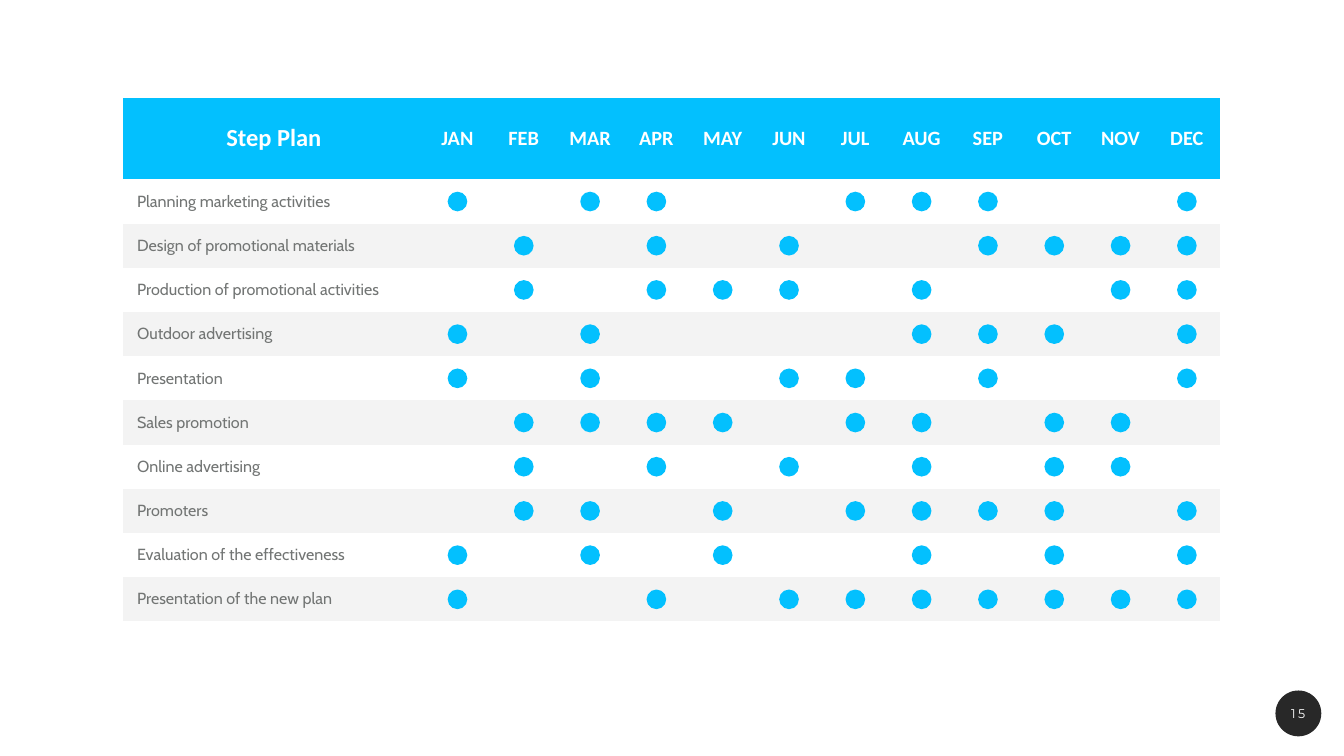
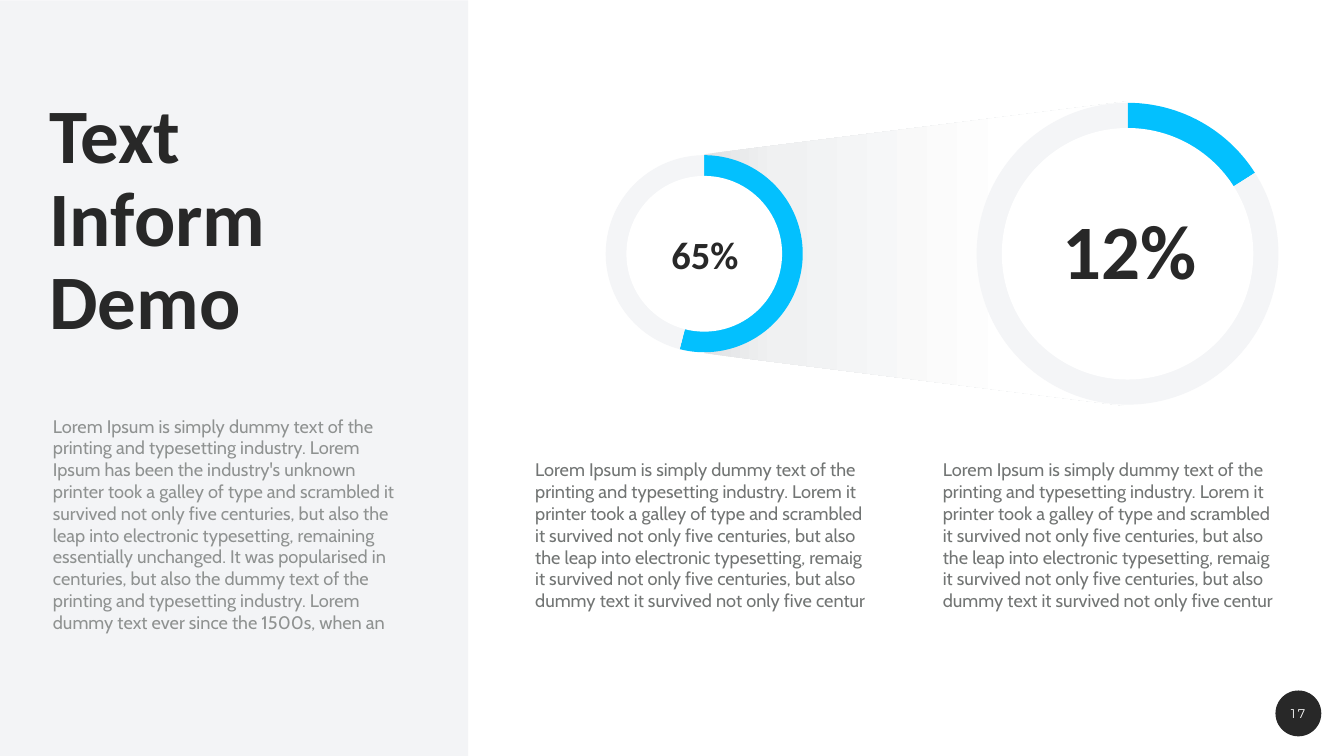
from copy import deepcopy
from dataclasses import dataclass

from lxml.etree import SubElement
from pptx import Presentation
from pptx.chart.data import CategoryChartData
from pptx.dml.color import RGBColor
from pptx.enum.chart import XL_CHART_TYPE as ChartType
from pptx.enum.shapes import MSO_SHAPE as Preset
from pptx.enum.text import MSO_ANCHOR as Anchor, MSO_AUTO_SIZE as AutoSize, PP_ALIGN as Align
from pptx.oxml.ns import qn
from pptx.util import Pt

PX = 9144
SLIDE_W, SLIDE_H = 2667, 1500
TITLE_ONLY, BLANK = 5, 6
PLAIN_TABLE = "{2D5ABB26-0587-4C30-8999-92F81FD0307C}"

CYAN = RGBColor(0x03, 0xC0, 0xFE)
DARK = RGBColor(0x28, 0x28, 0x28)
WHITE = RGBColor(0xFF, 0xFF, 0xFF)
STRIPE = RGBColor(0xF3, 0xF3, 0xF3)
PANEL = RGBColor(0xF3, 0xF4, 0xF6)
TRACK = RGBColor(0xF4, 0xF5, 0xF7)
GREY = RGBColor(0x72, 0x75, 0x74)
PALE = RGBColor(0x8F, 0x92, 0x91)
BEAM_STOPS = [
    (0, RGBColor(0xE1, 0xE2, 0xE4)),
    (0.17, RGBColor(0xF0, 0xF1, 0xF2)),
    (0.74, WHITE),
]


@dataclass
class Style:
    size: int
    font: str
    color: RGBColor
    bold: bool = False
    align: Align = Align.LEFT
    leading: float = 1.0
    tracking: int = 0


PAGE_NUMBER = Style(18, "Montserrat", WHITE, align=Align.CENTER, tracking=360)
PLAN_HEAD = Style(35, "Calibri", WHITE, True, Align.CENTER, 0.9)
MONTH_HEAD = Style(29, "Calibri", WHITE, True, Align.CENTER, 0.9)
STEP = Style(23, "Cabin", GREY)
HEADLINE = Style(110, "Calibri", DARK, True, leading=0.9)
INTRO = Style(26, "Cabin", PALE)
CAPTION = Style(26, "Cabin", GREY)

MONTHS = "JAN FEB MAR APR MAY JUN JUL AUG SEP OCT NOV DEC".split()
PLAN_TITLE = "Step Plan"
PLAN = [
    ("Planning marketing activities", "JAN MAR APR JUL AUG SEP DEC"),
    ("Design of promotional materials", "FEB APR JUN SEP OCT NOV DEC"),
    ("Production of promotional activities", "FEB APR MAY JUN AUG NOV DEC"),
    ("Outdoor advertising", "JAN MAR AUG SEP OCT DEC"),
    ("Presentation", "JAN MAR JUN JUL SEP DEC"),
    ("Sales promotion", "FEB MAR APR MAY JUL AUG OCT NOV"),
    ("Online advertising", "FEB APR JUN AUG OCT NOV"),
    ("Promoters", "FEB MAR MAY JUL AUG SEP OCT DEC"),
    ("Evaluation of the effectiveness", "JAN MAR MAY AUG OCT DEC"),
    ("Presentation of the new plan", "JAN APR JUN JUL AUG SEP OCT NOV DEC"),
]

INFORM_TITLE = "Text\nInform\nDemo"
INTRO_TEXT = (
    "Lorem Ipsum is simply dummy text of the printing and typesetting industry. "
    "Lorem Ipsum has been the industry's unknown printer took a galley of type and "
    "scrambled it survived not only five centuries, but also the leap into electronic "
    "typesetting, remaining essentially unchanged. It was popularised in centuries, "
    "but also the dummy text of the printing and typesetting industry. "
    "Lorem dummy text ever since the 1500s, when an"
)
CAPTION_TEXT = (
    "Lorem Ipsum is simply dummy text of the printing and typesetting industry. "
    "Lorem it printer took a galley of type and scrambled it survived not only five "
    "centuries, but also the leap into electronic typesetting, remaig it survived not "
    "only five centuries, but also dummy text it survived not only five centur"
)
RINGS = [
    {"label": "65%", "share": 54, "at": (1200, 306), "size": 395, "band": 43,
     "label_box": (1316, 459, 166, 103), "label_size": 55, "caption_x": 1058},
    {"label": "12%", "share": 16, "at": (1935, 201), "size": 605, "band": 53,
     "label_box": (2081, 408, 323, 196), "label_size": 110, "caption_x": 1867},
]

TABLE_X, TABLE_Y, TABLE_W, TABLE_H = 245, 195, 2176, 1038
STEP_W, HEAD_H, DOT = 597, 161, 39
MONTH_W = (TABLE_W - STEP_W) / len(MONTHS)
ROW_H = (TABLE_H - HEAD_H) / len(PLAN)


def emu(*lengths):
    return [round(length * PX) for length in lengths]


def write(frame, text, style):
    frame.text = text
    for paragraph in frame.paragraphs:
        paragraph.alignment = style.align
        paragraph.line_spacing = style.leading
        for run in paragraph.runs:
            run.font.size = Pt(style.size)
            run.font.name = style.font
            run.font.bold = style.bold
            run.font.color.rgb = style.color
            if style.tracking:
                run.font._element.set("spc", str(style.tracking))


def set_frame(frame, anchor=Anchor.TOP, wrap=True, fit=AutoSize.NONE):
    frame.margin_left = frame.margin_right = frame.margin_top = frame.margin_bottom = 4 * PX
    frame.vertical_anchor = anchor
    frame.word_wrap = wrap
    frame.auto_size = fit


def add_text(slide, box, text, style, **layout):
    frame = slide.shapes.add_textbox(*emu(*box)).text_frame
    set_frame(frame, **layout)
    write(frame, text, style)


def add_plain(slide, preset, box, color):
    shape = slide.shapes.add_shape(preset, *emu(*box))
    shape.shadow.inherit = False
    shape.fill.solid()
    shape.fill.fore_color.rgb = color
    shape.line.fill.background()


def add_page_number(slide, number):
    add_plain(slide, Preset.OVAL, (2531, 1370, 91, 91), DARK)
    add_text(slide, (2543, 1396, 66, 39), str(number), PAGE_NUMBER,
             fit=AutoSize.SHAPE_TO_FIT_TEXT)


def fill_cell(cell, color, text="", style=STEP, left=6):
    cell.fill.solid()
    cell.fill.fore_color.rgb = color
    cell.vertical_anchor = Anchor.MIDDLE
    cell.margin_right = cell.margin_top = cell.margin_bottom = 6 * PX
    cell.margin_left = left * PX
    if text:
        write(cell.text_frame, text, style)


def add_plan_table(slide):
    graphic = slide.shapes.add_table(
        len(PLAN) + 1, len(MONTHS) + 1, *emu(TABLE_X, TABLE_Y, TABLE_W, TABLE_H))
    table = graphic.table
    table._tbl.tblPr.find(qn("a:tableStyleId")).text = PLAIN_TABLE
    table.horz_banding = False
    for column, width in zip(table.columns, emu(STEP_W, *[MONTH_W] * len(MONTHS))):
        column.width = width
    for row, height in zip(table.rows, emu(HEAD_H, *[ROW_H] * len(PLAN))):
        row.height = height

    fill_cell(table.cell(0, 0), CYAN, PLAN_TITLE, PLAN_HEAD)
    for column, month in enumerate(MONTHS, 1):
        fill_cell(table.cell(0, column), CYAN, month, MONTH_HEAD)
    for row, (step, _) in enumerate(PLAN, 1):
        color = WHITE if row % 2 else STRIPE
        fill_cell(table.cell(row, 0), color, step, STEP, left=27)
        for column in range(1, len(MONTHS) + 1):
            fill_cell(table.cell(row, column), color)


def add_plan_dots(slide):
    for row, (_, active) in enumerate(PLAN):
        y = TABLE_Y + HEAD_H + (row + 0.5) * ROW_H - DOT / 2
        for month in active.split():
            x = TABLE_X + STEP_W + (MONTHS.index(month) + 0.5) * MONTH_W - DOT / 2
            add_plain(slide, Preset.OVAL, (x, y, DOT, DOT), CYAN)


def add_beam(slide):
    small, large = [
        (x + size / 2, y, y + size)
        for (x, y), size in ((ring["at"], ring["size"]) for ring in RINGS)
    ]
    builder = slide.shapes.build_freeform(small[0], small[1], scale=PX)
    builder.add_line_segments(
        [(large[0], large[1]), (large[0], large[2]), (small[0], small[2])], close=True)
    beam = builder.convert_to_shape()
    beam.shadow.inherit = False
    beam.line.fill.background()
    beam.fill.gradient()
    beam.fill.gradient_angle = 0
    first = beam.fill.gradient_stops[0]._gs
    first.addnext(deepcopy(first))
    for stop, (position, color) in zip(beam.fill.gradient_stops, BEAM_STOPS):
        stop.position = position
        stop.color.rgb = color


def fill_plot(chart):
    area = chart._chartSpace.chart.plotArea
    layout = area.find(qn("c:layout"))
    if layout is None:
        layout = area.makeelement(qn("c:layout"))
        area.insert(0, layout)
    manual = SubElement(layout, qn("c:manualLayout"))
    for tag, value in [("layoutTarget", "inner"), ("xMode", "edge"), ("yMode", "edge"),
                       ("x", 0.005), ("y", 0.005), ("w", 0.99), ("h", 0.99)]:
        SubElement(manual, qn(f"c:{tag}")).set("val", str(value))


def add_ring(slide, ring):
    (x, y), size, band = ring["at"], ring["size"], ring["band"]
    shares = CategoryChartData()
    shares.categories = ["1", "2"]
    shares.add_series("Series 1", (ring["share"], 100 - ring["share"]))
    chart = slide.shapes.add_chart(ChartType.PIE, *emu(x, y, size, size), shares).chart
    chart.has_legend = False
    chart.has_title = False
    chart.font.name = "Montserrat"
    chart.font.size = Pt(10)
    chart.font.color.rgb = GREY
    pie = chart.plots[0]
    pie.vary_by_categories = True
    for index, color in enumerate((CYAN, TRACK)):
        slice_format = pie.series[0].points[index].format
        slice_format.fill.solid()
        slice_format.fill.fore_color.rgb = color
        slice_format.line.fill.background()
    fill_plot(chart)

    hole = size - 2 * band
    add_plain(slide, Preset.OVAL, (x + band, y + band, hole, hole), WHITE)
    label = Style(ring["label_size"], "Calibri", DARK, True, Align.CENTER, 0.9)
    add_text(slide, ring["label_box"], ring["label"], label, anchor=Anchor.MIDDLE,
             wrap=False, fit=AutoSize.SHAPE_TO_FIT_TEXT)
    add_text(slide, (ring["caption_x"], 906, 673, 359), CAPTION_TEXT, CAPTION)


def build_plan_slide(deck):
    slide = deck.slides.add_slide(deck.slide_layouts[BLANK])
    add_plan_table(slide)
    add_plan_dots(slide)
    add_page_number(slide, 15)


def build_inform_slide(deck):
    slide = deck.slides.add_slide(deck.slide_layouts[TITLE_ONLY])
    add_beam(slide)
    add_plain(slide, Preset.RECTANGLE, (0, 1, 929, 1499), PANEL)
    title = slide.shapes.title
    title.left, title.top, title.width, title.height = emu(94, 188, 756, 550)
    set_frame(title.text_frame)
    write(title.text_frame, INFORM_TITLE, HEADLINE)
    slide.shapes._spTree.append(title._element)
    add_text(slide, (101, 819, 713, 545), INTRO_TEXT, INTRO)
    for ring in RINGS:
        add_ring(slide, ring)
    add_page_number(slide, 17)


def main():
    deck = Presentation()
    deck.slide_width, deck.slide_height = emu(SLIDE_W, SLIDE_H)
    build_plan_slide(deck)
    build_inform_slide(deck)
    deck.save("out.pptx")


if __name__ == "__main__":
    main()
